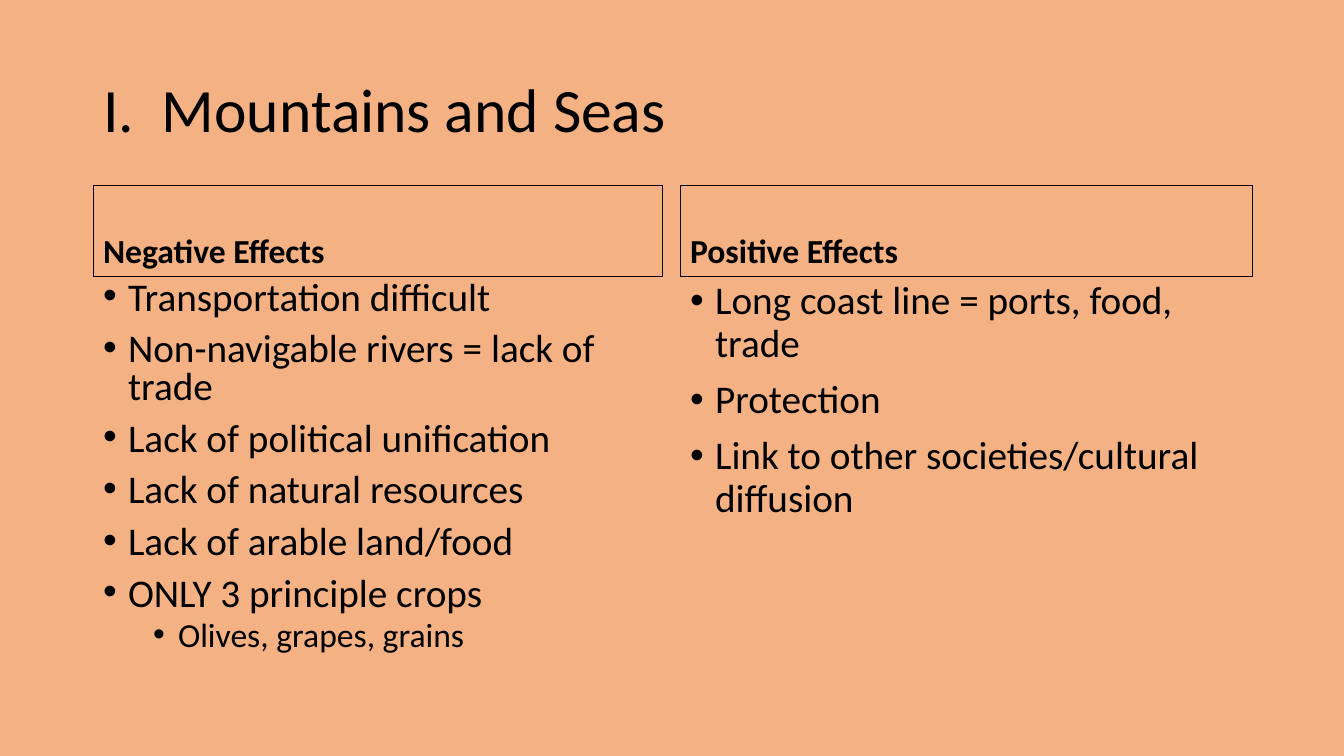
from lxml import etree
from pptx import Presentation
from pptx.dml.color import RGBColor
from pptx.enum.text import MSO_ANCHOR, MSO_AUTO_SIZE, PP_ALIGN
from pptx.oxml.ns import qn
from pptx.util import Emu, Pt

LEFT = PP_ALIGN.LEFT
TOP, MIDDLE, BOTTOM = MSO_ANCHOR.TOP, MSO_ANCHOR.MIDDLE, MSO_ANCHOR.BOTTOM
NO_AUTOFIT = MSO_AUTO_SIZE.NONE

# Content: list items are (level, text)
BACKGROUND, INK = "F4B183", "000000"
TITLE = "I.  Mountains and Seas"
EFFECTS = [
    {"heading": "Negative Effects", "left": 93, "width": 569, "spacing": 0.8,
     "items": [(0, "Transportation difficult"),
               (0, "Non-navigable rivers = lack of trade"),
               (0, "Lack of political unification"),
               (0, "Lack of natural resources"),
               (0, "Lack of arable land/food"),
               (0, "ONLY 3 principle crops"),
               (1, "Olives, grapes, grains")]},
    {"heading": "Positive Effects", "left": 680, "width": 572, "spacing": 0.9,
     "items": [(0, "Long coast line = ports, food, trade"),
               (0, "Protection"),
               (0, "Link to other societies/cultural diffusion")]},
]

# Layout in px
SLIDE_W, SLIDE_H = 1344, 756
TITLE_BOX = (93, 40, 1159, 146)
HEADING_TOP, HEADING_H, LIST_H = 185, 91, 406
INDENT, LEVEL_STEP = 25, 50
LEVEL_FORMAT = [{"size": 28, "before": 10}, {"size": 24, "before": 5}]


def px(length):
    return Emu(round(length * 914400 / 100.8))


def color(hex_string):
    return RGBColor.from_string(hex_string)


def place(holder, box, anchor):
    for side, length in zip(("left", "top", "width", "height"), box):
        setattr(holder, side, px(length))
    frame = holder.text_frame
    frame_format = {"word_wrap": True, "auto_size": NO_AUTOFIT, "vertical_anchor": anchor}
    for key, value in frame_format.items():
        setattr(frame, key, value)
    return frame


def write(paragraph, text, size, spacing=0.9, before=0, bold=False):
    paragraph_format = {"text": text, "alignment": LEFT, "line_spacing": spacing,
                        "space_before": Pt(before)}
    for key, value in paragraph_format.items():
        setattr(paragraph, key, value)
    font = paragraph.runs[0].font
    for key, value in {"name": "Calibri", "size": Pt(size), "bold": bold}.items():
        setattr(font, key, value)
    font.color.rgb = color(INK)


def add_bullet(paragraph, level):
    paragraph.level = level
    properties = paragraph._p.get_or_add_pPr()
    properties.set("marL", str(px(INDENT + level * LEVEL_STEP)))
    properties.set("indent", str(-px(INDENT)))
    etree.SubElement(properties, qn("a:buFont"), typeface="Arial")
    etree.SubElement(properties, qn("a:buChar"), char="•")


prs = Presentation()
prs.slide_width, prs.slide_height = px(SLIDE_W), px(SLIDE_H)
slide = prs.slides.add_slide(prs.slide_layouts.get_by_name("Comparison"))
slide.background.fill.solid()
slide.background.fill.fore_color.rgb = color(BACKGROUND)

# Title
title, *body_holders = slide.placeholders
write(place(title, TITLE_BOX, MIDDLE).paragraphs[0], TITLE, 44)

# Columns: outlined heading above its list
for effect, heading, points in zip(EFFECTS, body_holders[::2], body_holders[1::2]):
    left, width = effect["left"], effect["width"]
    heading_frame = place(heading, (left, HEADING_TOP, width, HEADING_H), BOTTOM)
    write(heading_frame.paragraphs[0], effect["heading"], 24, before=10, bold=True)
    heading.line.color.rgb = color(INK)
    heading.line.width = Pt(0.25)

    list_frame = place(points, (left, HEADING_TOP + HEADING_H, width, LIST_H), TOP)
    for number, (level, text) in enumerate(effect["items"]):
        paragraph = list_frame.add_paragraph() if number else list_frame.paragraphs[0]
        write(paragraph, text, spacing=effect["spacing"], **LEVEL_FORMAT[level])
        add_bullet(paragraph, level)

prs.save("out.pptx")
